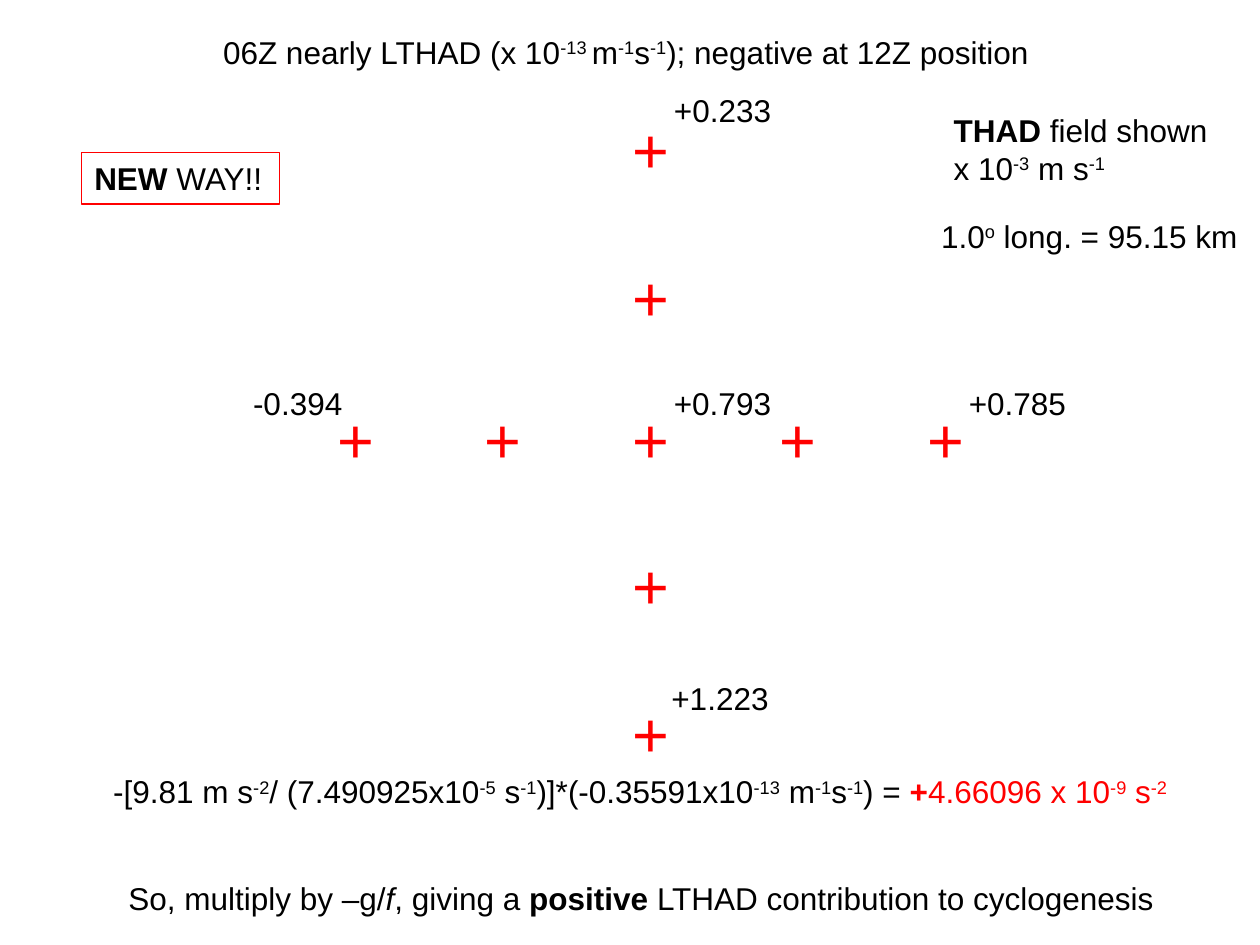
from lxml import etree
from pptx import Presentation
from pptx import util as u
from pptx.dml.color import RGBColor
from pptx.enum import shapes, text
from pptx.oxml.ns import qn

BLACK = RGBColor(0, 0, 0)
WHITE = RGBColor(255, 255, 255)
RED = RGBColor(255, 0, 0)
FONT = "Arial"
HIGH = 0.4  # height of a one-line box

# Tops and lefts of the plus marks
ROWS = (0.83, 2, 3.13, 4.29, 5.46)
COLS = [2.58 + 1.17 * i for i in range(5)]
MID = 2

# Runs are (words, style) pairs; style letters:
# ^ superscript, b bold, i italic, r red
TITLE = [("06Z nearly LTHAD (x 10", ""), ("-13 ", "^"), ("m", ""),
         ("-1", "^"), ("s", ""), ("-1", "^"),
         ("); negative at 12Z position", "")]
FIELD = [[("THAD", "b"), (" field shown", "")],
         [("x 10", ""), ("-3", "^"), (" m s", ""), ("-1", "^")]]
SCALE = [("1.0", ""), ("o", "^"), (" long. = 95.15 km", "")]
SUM = [("-[9.81 m s", ""), ("-2", "^"), ("/ (7.490925x10", ""), ("-5", "^"),
       (" s", ""), ("-1", "^"), (")]*(-0.35591x10", ""), ("-13", "^"),
       (" m", ""), ("-1", "^"), ("s", ""), ("-1", "^"), (") = ", ""),
       ("+", "br"), ("4.66096 x 10", "r"), ("-9", "^r"), (" s", "r"),
       ("-2", "^r")]
END = [("So, multiply by –g/", ""), ("f", "i"), (", giving a ", ""),
       ("positive", "b"), (" LTHAD contribution to cyclogenesis", "")]

# Column, row, shift right, shift down, width, value
VALUES = [
    (MID, 0, 0.33, -0.16, 0.98, "+0.233"),
    (0, MID, -0.67, -0.13, 0.92, "-0.394"),
    (MID, MID, 0.33, -0.13, 1, "+0.793"),
    (4, MID, 0.33, -0.13, 0.98, "+0.785"),
    (MID, 4, 0.31, -0.12, 0.98, "+1.223"),
]


def style(run, marks="", size=18):
    font = run.font
    font.name, font.size = FONT, u.Pt(size)
    font.bold, font.italic = "b" in marks, "i" in marks
    font.color.rgb = RED if "r" in marks else BLACK
    if "^" in marks:
        font._element.set("baseline", "30000")


def write(frame, lines):
    frame.word_wrap = False
    frame.vertical_anchor = text.MSO_ANCHOR.TOP
    for i, line in enumerate(lines):
        para = frame.add_paragraph() if i else frame.paragraphs[0]
        para.alignment = text.PP_ALIGN.LEFT
        for words, marks in line:
            run = para.add_run()
            run.text = words
            style(run, marks)


def paint(shape, alpha=100):
    """Fill white, at the given per cent of opacity."""
    shape.fill.solid()
    shape.fill.fore_color.rgb = WHITE
    if alpha < 100:
        tint = shape.fill._xPr.find(qn("a:solidFill"))[0]
        etree.SubElement(tint, qn("a:alpha")).set("val", str(alpha * 1000))


def box(slide, x, y, wide, lines, high=HIGH, alpha=100, edge=None):
    rect = slide.shapes.add_shape(
        shapes.MSO_SHAPE.RECTANGLE,
        *(u.Inches(n) for n in (x, y, wide, high)))
    rect.shadow.inherit = False
    paint(rect, alpha)
    if edge is None:
        rect.line.fill.background()
    else:
        rect.line.color.rgb = edge
        rect.line.width = u.Pt(0.75)
    write(rect.text_frame, lines)


def head(slide):
    title = slide.shapes.title
    title.left, title.top = u.Inches(1.67), u.Inches(0.21)
    title.width, title.height = u.Inches(6.73), u.Inches(HIGH)
    paint(title)
    write(title.text_frame, [TITLE])
    title.text_frame.auto_size = text.MSO_AUTO_SIZE.NONE


def plus(slide, col, row):
    mark = slide.shapes.add_textbox(
        *(u.Inches(n) for n in (COLS[col], ROWS[row], 0.42, 0.71)))
    mark.text_frame.word_wrap = True
    mark.text_frame.text = "+"
    style(mark.text_frame.paragraphs[0].runs[0], "r", 36)


def main():
    deck = Presentation()
    deck.slide_width, deck.slide_height = u.Inches(10), u.Inches(7.5)
    slide = deck.slides.add_slide(deck.slide_layouts[5])
    head(slide)
    box(slide, 0.8, 6.08, 8.9, [SUM])
    box(slide, 0.92, 6.93, 8.35, [END])
    box(slide, 0.65, 1.21, 1.57, [[("NEW", "b"), (" WAY!!", "")]],
        high=0.41, edge=RED)
    box(slide, 7.47, 0.83, 2.22, FIELD, high=0.7)
    box(slide, 7.37, 1.67, 2.59, [SCALE])
    for col, row, right, down, wide, value in VALUES:
        box(slide, COLS[col] + right, ROWS[row] + down, wide,
            [[(value, "")]], alpha=85)
    for col in range(len(COLS)):
        for row in range(len(ROWS)):
            if MID in (col, row):
                plus(slide, col, row)
    deck.save("out.pptx")


if __name__ == "__main__":
    main()
